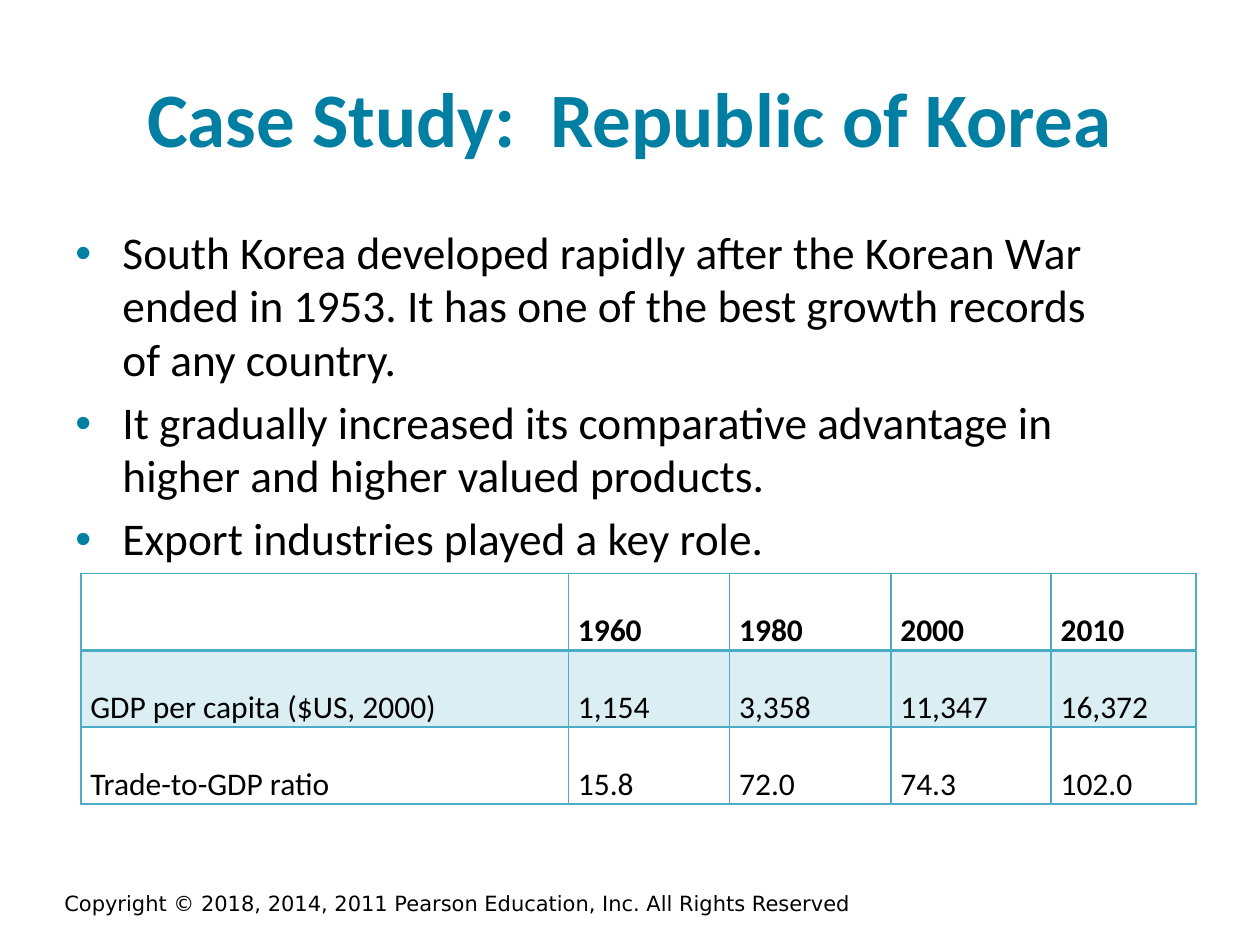
from lxml import etree
from pptx import Presentation
from pptx.dml.color import RGBColor
from pptx.enum.text import MSO_ANCHOR, PP_ALIGN
from pptx.oxml.ns import qn
from pptx.util import Cm, Pt

MIDDLE, CENTER = MSO_ANCHOR.MIDDLE, PP_ALIGN.CENTER
COLORS = {"head": "007FA3", "text": "000000", "line": "4BACC6", "band": "DBEEF4"}

POINTS = [
    "South Korea developed rapidly after the Korean War ended in 1953. "
    "It has one of the best growth records of any country.",
    "It gradually increased its comparative advantage in higher and higher valued products.",
    "Export industries played a key role.",
]
ROWS = [
    ["", "1960", "1980", "2000", "2010"],
    ["GDP per capita ($US, 2000)", "1,154", "3,358", "11,347", "16,372"],
    ["Trade-to-GDP ratio", "15.8", "72.0", "74.3", "102.0"],
]
WIDTHS = [9.83, 3.25, 3.25, 3.23, 2.92]
FOOTER = "Copyright © 2018, 2014, 2011 Pearson Education, Inc. All Rights Reserved"


def style(par, size, color="text", bold=False, name="Calibri"):
    """Format every run of a paragraph."""
    for run in par.runs:
        font = run.font
        font.name, font.size, font.bold = name, Pt(size), bold
        font.color.rgb = RGBColor.from_string(COLORS[color])


def add_bullet(par, indent):
    """Give a paragraph a coloured bullet and a hanging indent."""
    props = par._p.get_or_add_pPr()
    props.set("marL", str(indent))
    props.set("indent", str(-indent))
    tint = etree.SubElement(props, qn("a:buClr"))
    etree.SubElement(tint, qn("a:srgbClr"), val=COLORS["head"])
    etree.SubElement(props, qn("a:buFont"), typeface="Arial")
    etree.SubElement(props, qn("a:buChar"), char="•")


def add_border(cell, weights):
    """Draw the left, right, top and bottom lines of a cell."""
    props = cell._tc.get_or_add_tcPr()
    for spot, (side, weight) in enumerate(zip("LRTB", weights)):
        line = etree.Element(qn(f"a:ln{side}"), w=str(Pt(weight)))
        fill = etree.SubElement(line, qn("a:solidFill"))
        etree.SubElement(fill, qn("a:srgbClr"), val=COLORS["line"])
        props.insert(spot, line)


def add_title(slide, left, top, width, height):
    """Place and format the title."""
    title = slide.shapes.title
    title.left, title.top, title.width, title.height = left, top, width, height
    frame = title.text_frame
    frame.text = "Case Study:  Republic of Korea"
    frame.vertical_anchor = MIDDLE
    par = frame.paragraphs[0]
    par.alignment = CENTER
    style(par, 44, "head", True)


def add_points(slide, left, top, width, height):
    """Write the bulleted points."""
    frame = slide.shapes.add_textbox(left, top, width, height).text_frame
    frame.word_wrap = True
    for i, text in enumerate(POINTS):
        par = frame.add_paragraph() if i else frame.paragraphs[0]
        par.text = text
        add_bullet(par, Cm(0.95))
        par.line_spacing = 0.98
        par.space_before = Pt(5.5 if i else 0)
        style(par, 25.9)


def add_data(slide, left, top, width, height):
    """Build the table of growth figures."""
    table = slide.shapes.add_table(
        len(ROWS), len(WIDTHS), left, top, width, height).table
    table.first_row = table.horz_banding = False
    for col, size in zip(table.columns, WIDTHS):
        col.width = Cm(size)
    for r, row in enumerate(ROWS):
        for c, text in enumerate(row):
            cell = table.cell(r, c)
            cell.margin_left = cell.margin_right = Cm(0.19)
            cell.margin_top = cell.margin_bottom = 0
            cell.text = text
            par = cell.text_frame.paragraphs[0]
            par.line_spacing = 2.0
            style(par, 18, bold=r == 0)
            if r == 1:
                cell.fill.solid()
                cell.fill.fore_color.rgb = RGBColor.from_string(COLORS["band"])
            else:
                cell.fill.background()
            add_border(cell, (1, 1, 2 if r == 1 else 1, 2 if r == 0 else 1))


def add_footer(slide, left, top, width, height):
    """Write the copyright line."""
    frame = slide.shapes.add_textbox(left, top, width, height).text_frame
    frame.word_wrap = True
    frame.vertical_anchor = MIDDLE
    frame.text = FOOTER
    par = frame.paragraphs[0]
    par.alignment = CENTER
    style(par, 12, name="DejaVu Sans")


def main():
    """Build the slide and save it."""
    deck = Presentation()
    deck.slide_width, deck.slide_height = Cm(25.4), Cm(19.05)
    slide = deck.slides.add_slide(deck.slide_layouts[5])
    add_footer(slide, Cm(-0.4), Cm(17.75), Cm(19.25), Cm(0.91))
    add_title(slide, Cm(1.27), Cm(0.76), Cm(22.86), Cm(3.18))
    add_points(slide, Cm(1.27), Cm(4.45), Cm(21.67), Cm(6.5))
    add_data(slide, Cm(1.63), Cm(11.56), Cm(sum(WIDTHS)), Cm(4.65))
    deck.save("out.pptx")


if __name__ == "__main__":
    main()
